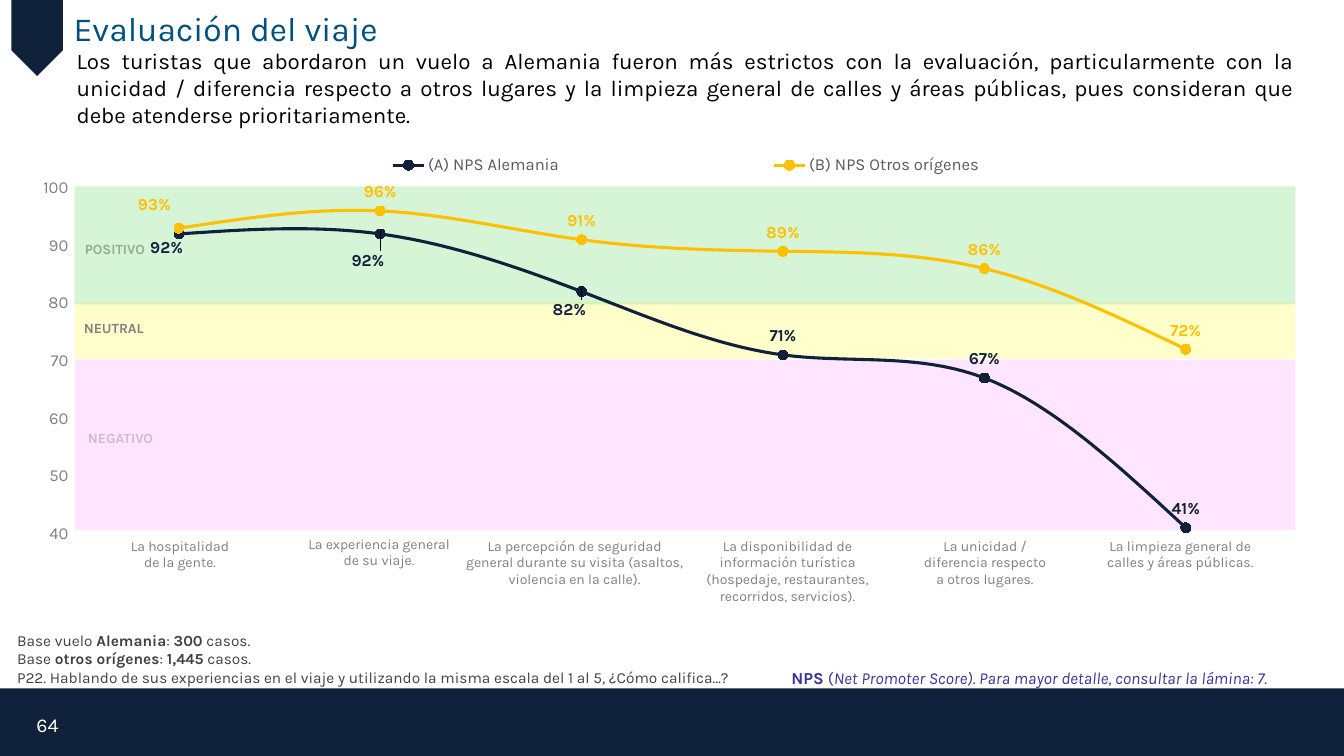
import pptx
import pptx.util
import pptx.chart.data
import pptx.dml.color
import pptx.enum.chart
import pptx.enum.shapes
import pptx.enum.text
import pptx.oxml

Cm, Pt = pptx.util.Cm, pptx.util.Pt
Shape = pptx.enum.shapes.MSO_SHAPE
Align = pptx.enum.text.PP_ALIGN
Anchor = pptx.enum.text.MSO_ANCHOR
Fit = pptx.enum.text.MSO_AUTO_SIZE
Kind = pptx.enum.chart
NAVY, GOLD, GRAY = "10213B", "FFC000", "808080"
PERCENT = '#"%"'
NS = "http://schemas.openxmlformats.org/drawingml/2006/"


def color(code):
    return pptx.dml.color.RGBColor.from_string(code)


def apply(item, **form):
    for key, value in form.items():
        setattr(item, key, value)


def layout(x, y, w=None, h=None, inner=False):
    target = '<c:layoutTarget val="inner"/>' if inner else ""
    modes = '<c:xMode val="edge"/><c:yMode val="edge"/>' if w else ""
    size = f'<c:w val="{w}"/><c:h val="{h}"/>' if w else ""
    return pptx.oxml.parse_xml(
        f'<c:layout xmlns:c="{NS}chart"><c:manualLayout>{target}{modes}'
        f'<c:x val="{x}"/><c:y val="{y}"/>{size}</c:manualLayout></c:layout>')


class Page:
    face = "Karla"

    def __init__(self, deck):
        self.slide = deck.slides.add_slide(deck.slide_layouts[5])
        self.shapes = self.slide.shapes

    def font(self, font, size, code, **form):
        apply(font, name=self.face, size=Pt(size), **form)
        font.color.rgb = color(code)

    def block(self, kind, box, code, alpha=None, turn=0):
        shape = self.shapes.add_shape(kind, *map(Cm, box))
        shape.shadow.inherit = False
        shape.rotation = turn
        shape.fill.solid()
        shape.fill.fore_color.rgb = color(code)
        shape.line.fill.background()
        if alpha:
            tint = shape.element.xpath("./p:spPr//a:srgbClr")[0]
            tint.append(pptx.oxml.parse_xml(
                f'<a:alpha xmlns:a="{NS}main" val="{alpha * 1000}"/>'))

    def words(self, frame, lines, size, code, align, wrap=True,
              anchor=Anchor.TOP, fit=Fit.SHAPE_TO_FIT_TEXT, **form):
        apply(frame, word_wrap=wrap, vertical_anchor=anchor, auto_size=fit)
        for num, line in enumerate(lines):
            para = frame.add_paragraph() if num else frame.paragraphs[0]
            para.alignment = align
            for text, extra in line:
                run = para.add_run()
                run.text = text
                self.font(run.font, size, code, **{**form, **extra})

    def text(self, box, text, size, code, align=Align.LEFT, **form):
        lines = [[(text, {})]] if isinstance(text, str) else text
        frame = self.shapes.add_textbox(*map(Cm, box)).text_frame
        self.words(frame, lines, size, code, align, **form)

    def title(self, box, text, size, code):
        shape = self.shapes.title
        apply(shape, **dict(zip(("left", "top", "width", "height"), map(Cm, box))))
        self.words(shape.text_frame, [[(text, {})]], size, code, Align.LEFT)

    def chart(self, box, rows):
        data = pptx.chart.data.CategoryChartData(number_format="0")
        data.categories = list("123456")
        for name, values, code, shifts in rows:
            data.add_series(name, values)
        chart = self.shapes.add_chart(
            Kind.XL_CHART_TYPE.LINE_MARKERS, *map(Cm, box), data).chart
        apply(chart, has_title=False, has_legend=True)
        apply(chart.font, name="Calibri", size=Pt(10))
        chart.font.color.rgb = color("000000")
        apply(chart.legend, position=Kind.XL_LEGEND_POSITION.TOP,
              include_in_layout=False)
        self.font(chart.legend.font, 12, "595959")
        chart.category_axis.visible = False
        axis = chart.value_axis
        apply(axis, minimum_scale=40, maximum_scale=100, major_unit=10,
              has_major_gridlines=False,
              major_tick_mark=Kind.XL_TICK_MARK.OUTSIDE)
        axis.format.line.fill.background()
        apply(axis.tick_labels, number_format="0", number_format_is_linked=False)
        self.font(axis.tick_labels.font, 12, GRAY)
        chart.plots[0].vary_by_categories = False
        for series, row in zip(chart.plots[0].series, rows):
            self.style(series, row[2], row[3])
        shifts = [shift for row in rows for shift in row[3].values()]
        root = chart.element
        for label, shift in zip(root.xpath(".//c:ser//c:dLbl"), shifts):
            label.insert(1, layout(*shift))
            label.insert(2, pptx.oxml.parse_xml(
                f'<c:numFmt xmlns:c="{NS}chart" formatCode="#&quot;%&quot;"'
                ' sourceLinked="0"/>'))
        for old in root.xpath(".//c:plotArea/c:layout|.//c:legend/c:layout"):
            old.getparent().remove(old)
        area = root.xpath(".//c:plotArea")[0]
        area.insert(0, layout(0.035, 0.135, 0.986, 0.837, True))
        spot = root.xpath(".//c:legend/c:legendPos")[0]
        spot.addnext(layout(0.1, 0.04, 0.82, 0.08))

    def style(self, series, code, shifts):
        series.smooth = True
        series.format.line.width = Pt(2.25)
        series.format.line.color.rgb = color(code)
        mark = series.marker
        apply(mark, style=Kind.XL_MARKER_STYLE.CIRCLE, size=7)
        mark.format.fill.solid()
        mark.format.fill.fore_color.rgb = color(code)
        mark.format.line.color.rgb = color(code)
        above = Kind.XL_LABEL_POSITION.ABOVE
        labels = series.data_labels
        apply(labels, show_value=True, position=above, number_format=PERCENT,
              number_format_is_linked=False)
        self.font(labels.font, 12, code, bold=True)
        for num in shifts:
            label = series.points[num].data_label
            label.position = above
            self.font(label.font, 12, code, bold=True)


def main():
    deck = pptx.Presentation()
    apply(deck, slide_width=Cm(33.86), slide_height=Cm(19.05))
    page = Page(deck)
    bold, slant = {"bold": True}, {"italic": True}

    page.block(Shape.RECTANGLE, (0, 17.35, 33.86, 1.7), NAVY)
    page.text((0.05, 17.7, 1.68, 1.12), "64", 14, "FFFFFF", Align.RIGHT,
              anchor=Anchor.MIDDLE, fit=Fit.NONE)
    page.block(Shape.PENTAGON, (-0.03, 0.3, 1.93, 1.3), NAVY, turn=90)
    page.title((1.6, 0.08, 21.21, 1.27), "Evaluación del viaje", 24, "00507F")

    topics = [
        (2.92, 13.41, 3.23, "La hospitalidad de la gente."),
        (7.39, 13.36, 4.32, "La experiencia general de su viaje."),
        (11.4, 13.41, 6.15, "La percepción de seguridad general durante su "
                            "visita (asaltos, violencia en la calle)."),
        (16.97, 13.41, 5.74, "La disponibilidad de información turística "
                             "(hospedaje, restaurantes, recorridos, servicios)."),
        (22.96, 13.41, 3.71, "La unicidad / diferencia respecto a otros lugares."),
        (27.46, 13.41, 4.55, "La limpieza general de calles y áreas públicas."),
    ]
    for x, y, w, text in topics:
        page.text((x, y, w, 1.12), text, 10, GRAY, Align.CENTER)

    for y, h, code, alpha in [(9.07, 4.29, "FFCCFF", 50), (7.62, 1.42, "FFFF00", 20),
                              (4.7, 2.97, "33CC33", 20)]:
        page.block(Shape.RECTANGLE, (1.88, y, 30.76, h), code, alpha)

    page.chart((1.09, 3.33, 31.32, 10.41), [
        ("(A) NPS Alemania", (92, 92, 82, 71, 67, 41), NAVY,
         {0: (-0.01, 0.08), 1: (-0.01, 0.11), 2: (-0.01, 0.09)}),
        ("(B) NPS Otros orígenes", (93, 96, 91, 89, 86, 72), GOLD,
         {0: (-0.02, -0.01)}),
    ])

    for x, y, w, text, code, wrap in [
            (1.93, 10.69, 2.21, "NEGATIVO", "CFBACE", True),
            (1.88, 5.94, 2.03, "POSITIVO", "96AB95", False),
            (1.8, 7.92, 2.13, "NEUTRAL", GRAY, False)]:
        page.text((x, y, w, 0.69), text, 10, code, Align.CENTER, wrap=wrap, **bold)

    page.text((19.69, 16.69, 14.17, 0.76), [[
        ("NPS", bold), (" (", {}),
        ("Net Promoter Score). Para mayor detalle, consultar la lámina: 7.", slant),
    ]], 12, "393596", wrap=False)
    page.text((1.68, 1.07, 31.17, 2.31),
              "Los turistas que abordaron un vuelo a Alemania fueron más estrictos "
              "con la evaluación, particularmente con la unicidad / diferencia "
              "respecto a otros lugares y la limpieza general de calles y áreas "
              "públicas, pues consideran que debe atenderse prioritariamente.",
              16, "000000", Align.JUSTIFY)
    bases = [[(lead, {}), (name, bold), (": ", {}), (count, bold), (" casos.", {})]
             for lead, name, count in [("Base vuelo ", "Alemania", "300"),
                                       ("Base ", "otros orígenes", "1,445")]]
    ask = ("P22. Hablando de sus experiencias en el viaje y utilizando la misma "
           "escala del 1 al 5, ¿Cómo califica…?")
    page.text((0.18, 15.77, 21.01, 1.68), bases + [[(ask, {})]], 11, "414141")
    deck.save("out.pptx")


if __name__ == "__main__":
    main()
